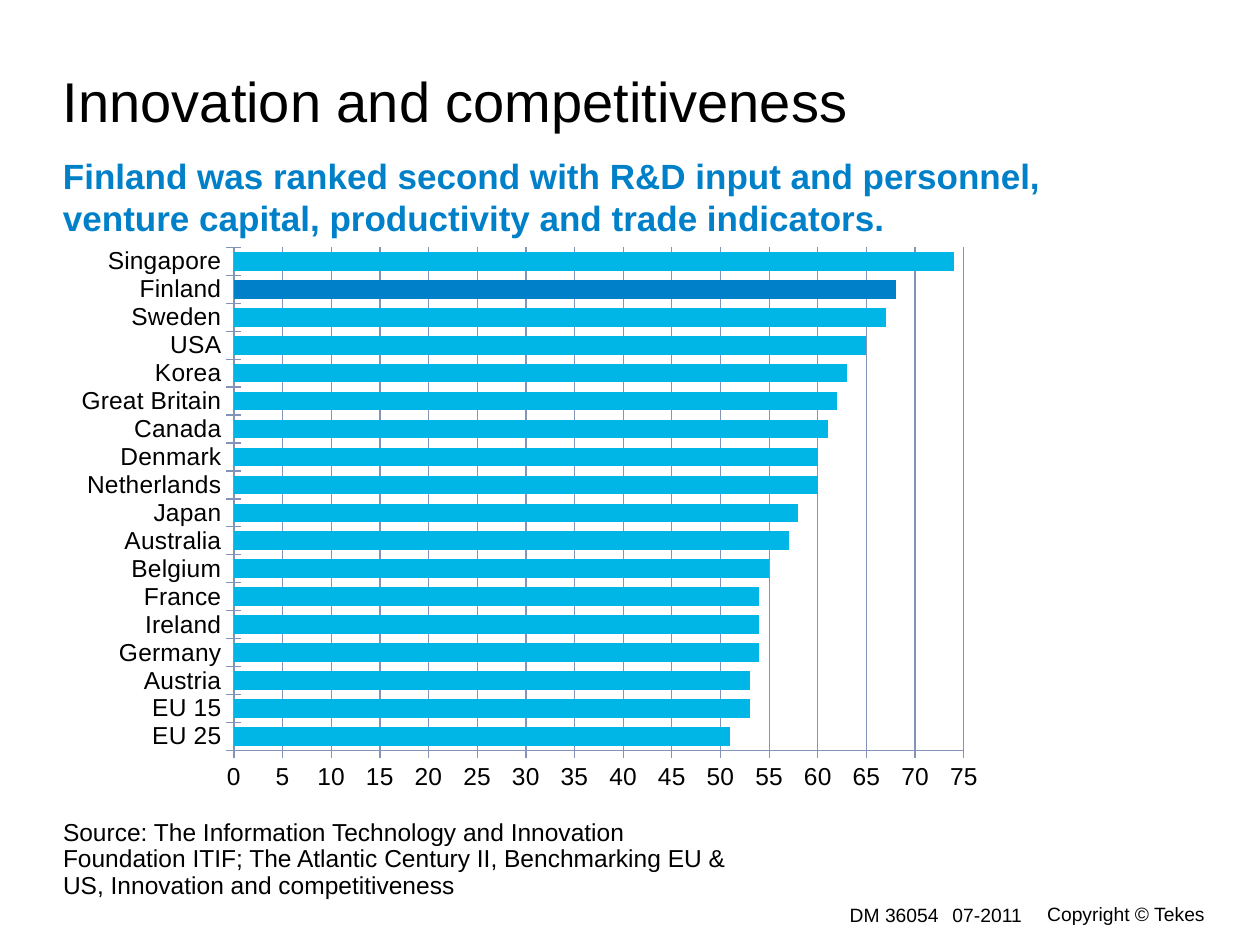
from dataclasses import dataclass
from typing import Any, Optional

from pptx import Presentation
from pptx import util as u
from pptx.chart.data import CategoryChartData
from pptx.dml.color import RGBColor
from pptx.enum import chart as ch, text as tx
from pptx.oxml import parse_xml
from pptx.oxml.ns import nsdecls, qn


@dataclass(frozen=True)
class Theme:
    font: str = "Arial"
    ink: str = "000000"
    blue: str = "0080C8"
    cyan: str = "00B6E7"
    grid: str = "8394B8"
    head: int = 32
    lead: int = 20
    body: int = 14
    foot: int = 11


@dataclass(frozen=True)
class Label:
    words: str
    box: tuple[float, float, float, float]
    size: int
    color: str
    bold: bool = False
    align: Any = tx.PP_ALIGN.LEFT
    anchor: Any = tx.MSO_ANCHOR.TOP
    lead: Optional[Any] = None


T = Theme()
RIGHT, MID = tx.PP_ALIGN.RIGHT, tx.MSO_ANCHOR.MIDDLE
LABELS = [
    Label("Innovation and competitiveness", (36, 42.5, 618, 70), T.head, T.ink, lead=0.9),
    Label("Finland was ranked second with R&D input and personnel, "
          "venture capital, productivity and trade indicators.",
          (36, 88.5, 590, 48), T.lead, T.blue, bold=True),
    Label("Source: The Information Technology and Innovation\n"
          "Foundation ITIF; The Atlantic Century II, Benchmarking EU & US, "
          "Innovation and competitiveness",
          (36, 468.7, 386, 34), T.body, T.ink, lead=u.Pt(15)),
    Label("DM 36054", (423.5, 515.5, 113, 14.4), T.foot, T.ink, align=RIGHT, anchor=MID),
    Label("07-2011", (544.3, 515.5, 48.2, 14.4), T.foot, T.ink, anchor=MID),
    Label("Copyright © Tekes", (592.5, 514.8, 96, 14.4), T.foot, T.ink,
          align=RIGHT, anchor=MID),
]
SCORES = {
    "EU 25": 51, "EU 15": 53, "Austria": 53, "Germany": 54, "Ireland": 54,
    "France": 54, "Belgium": 55, "Australia": 57, "Japan": 58,
    "Netherlands": 60, "Denmark": 60, "Canada": 61, "Great Britain": 62,
    "Korea": 63, "USA": 65, "Sweden": 67, "Finland": 68, "Singapore": 74,
}
PLOT = {"x": 0.158, "y": 0.033, "w": 0.675, "h": 0.851}


def apply(item: Any, form: dict[str, Any]) -> None:
    for key, val in form.items():
        setattr(item, key, val)


def style(font: Any, size: int, color: str, bold: bool = False) -> None:
    apply(font, {"name": T.font, "size": u.Pt(size), "bold": bold})
    font.color.rgb = RGBColor.from_string(color)


def paint(fill: Any, color: str) -> None:
    fill.solid()
    fill.fore_color.rgb = RGBColor.from_string(color)


def rule(line: Any) -> None:
    line.width = u.Pt(0.75)
    paint(line.fill, T.grid)


def write(slide: Any, lab: Label) -> None:
    frame = slide.shapes.add_textbox(*map(u.Pt, lab.box)).text_frame
    apply(frame, {"word_wrap": True, "vertical_anchor": lab.anchor,
                  "margin_left": 0, "margin_right": 0,
                  "margin_top": 0, "margin_bottom": 0})
    para = frame.paragraphs[0]
    apply(para, {"alignment": lab.align, "line_spacing": lab.lead})
    for num, line in enumerate(lab.words.split("\n")):
        if num:
            para.add_line_break()
        run = para.add_run()
        run.text = line
        style(run.font, lab.size, lab.color, lab.bold)


def place(chart: Any) -> None:
    area = chart._chartSpace.find(qn("c:chart")).find(qn("c:plotArea"))
    for old in area.findall(qn("c:layout")):
        area.remove(old)
    modes = "".join(f'<c:{k}Mode val="edge"/>' for k in "xy")
    sizes = "".join(f'<c:{k} val="{v}"/>' for k, v in PLOT.items())
    area.insert(0, parse_xml(
        f'<c:layout {nsdecls("c")}><c:manualLayout><c:layoutTarget val="inner"/>'
        f'{modes}{sizes}</c:manualLayout></c:layout>'))


def graph(slide: Any) -> None:
    data = CategoryChartData(number_format="0")
    data.categories = list(SCORES)
    data.add_series("Series 1", list(SCORES.values()))
    box = map(u.Pt, (36, 130.3, 618, 337.7))
    chart = slide.shapes.add_chart(ch.XL_CHART_TYPE.BAR_CLUSTERED, *box, data).chart
    apply(chart, {"has_legend": False, "has_title": False})
    style(chart.font, T.body, T.ink)
    plot = chart.plots[0]
    apply(plot, {"gap_width": 50, "vary_by_categories": False})
    bars = plot.series[0]
    paint(bars.format.fill, T.cyan)
    paint(bars.points[list(SCORES).index("Finland")].format.fill, T.blue)
    for axis in (chart.category_axis, chart.value_axis):
        axis.major_tick_mark = ch.XL_TICK_MARK.CROSS
        style(axis.tick_labels.font, T.body, T.ink)
        rule(axis.format.line)
    value = chart.value_axis
    apply(value, {"minimum_scale": 0, "maximum_scale": 75, "major_unit": 5,
                  "has_major_gridlines": True})
    apply(value.tick_labels, {"number_format": "0", "number_format_is_linked": False})
    rule(value.major_gridlines.format.line)
    place(chart)


def main() -> None:
    deck = Presentation()
    apply(deck, {"slide_width": u.Pt(720), "slide_height": u.Pt(540)})
    slide = deck.slides.add_slide(deck.slide_layouts[6])
    graph(slide)
    for lab in LABELS:
        write(slide, lab)
    deck.save("out.pptx")


if __name__ == "__main__":
    main()
